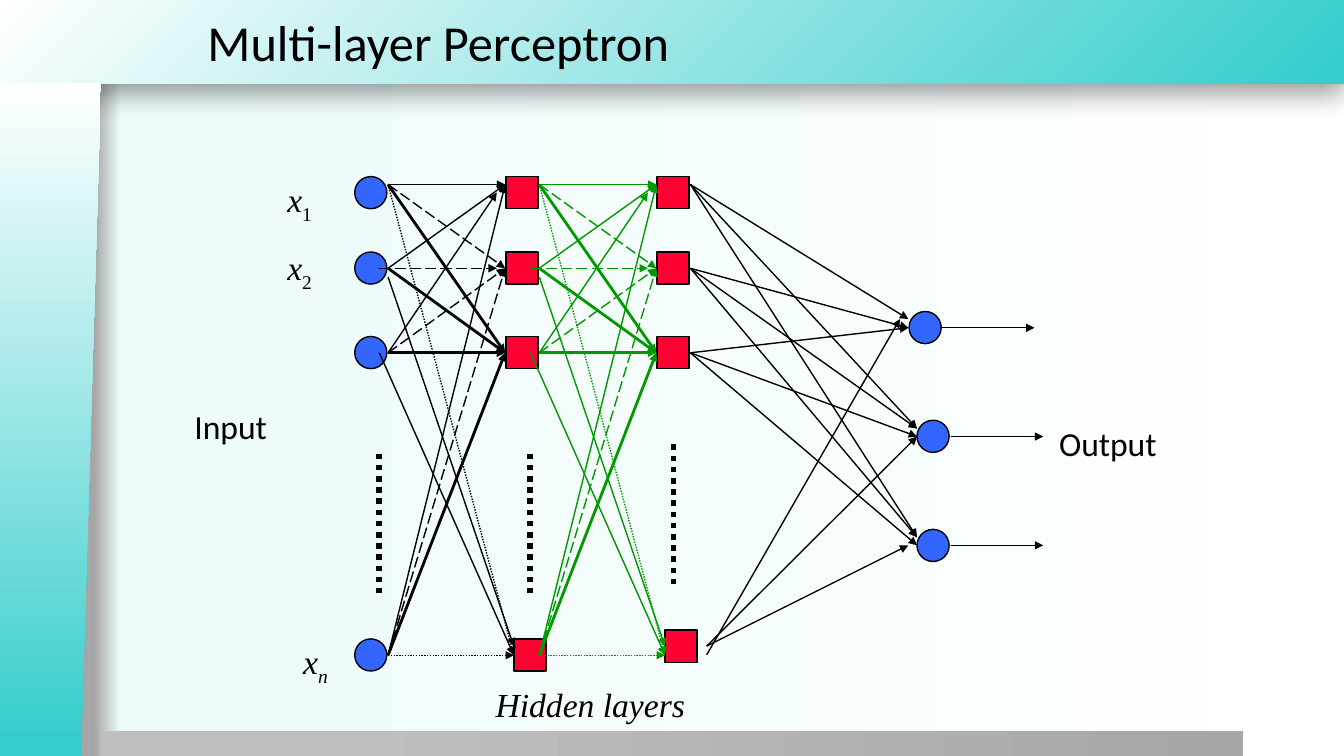
"""Build a slide showing a multi-layer perceptron diagram."""
from lxml import etree
from pptx import Presentation
from pptx.dml.color import RGBColor
from pptx.enum import dml, shapes, text
from pptx.oxml import ns
from pptx.util import Cm, Pt

BLACK = RGBColor(0x00, 0x00, 0x00)
WHITE = RGBColor(0xFF, 0xFF, 0xFF)
TEAL = RGBColor(0x34, 0xCC, 0xCC)
MINT = RGBColor(0xED, 0xFB, 0xFB)
GREY = RGBColor(0xA6, 0xA6, 0xA6)
LIGHT_GREY = RGBColor(0xBF, 0xBF, 0xBF)
MID_GREY = RGBColor(0xA7, 0xA7, 0xA7)
BLUE = RGBColor(0x33, 0x66, 0xFF)
RED = RGBColor(0xFF, 0x00, 0x33)
GREEN = RGBColor(0x00, 0x99, 0x00)

SERIF, SANS = "Times New Roman", "Calibri"
OVAL, BOX = shapes.MSO_SHAPE.OVAL, shapes.MSO_SHAPE.RECTANGLE
DOTS, DASHES = dml.MSO_LINE.ROUND_DOT, dml.MSO_LINE.LONG_DASH
NODE = 0.81
LAYER_GAP = 3.81
ROWS = (4.65, 6.76, 8.89, 16.51)

INPUTS = [(8.94, y) for y in (4.45, 6.35, 8.48, 16.1)]
HIDDEN = [(x, y) for x in (12.75, 16.56) for y in (4.45, 6.35, 8.48)]
LAST_HIDDEN = [(12.95, 16.1), (16.76, 15.88)]
OUTPUTS = [(22.91, 7.85), (23.11, 10.59), (23.11, 13.34)]
OUTPUT_TIPS = [(22.89, 8.26), (23.11, 11), (23.11, 13.74)]
ELLIPSES = [(9.55, 11.43), (13.36, 11.43), (16.97, 11.2)]
HIDDEN_NUDGES = {
    (2, 0): (0, 0, -0.21, 0.2),
    (1, 1): (-0.22, 0, -0.21, 0),
    (1, 3): (0, 0.22, 0, -0.22),
    (2, 3): (-0.22, 0, 0, 0),
}
OUTPUT_NUDGES = {
    (0, 0): (0, 0, 0, -0.22),
    (3, 0): (0, 0.22, -0.21, -0.22),
    (0, 1): (0, 0, 0, -0.2),
    (1, 1): (0, 0, 0, -0.2),
    (0, 2): (0, 0, 0, -0.2),
    (1, 2): (0, 0, 0, -0.2),
    (3, 2): (0, 0, -0.22, 0),
}


def add_child(parent, tag, **attrs):
    """Append a DrawingML element and return it."""
    child = etree.SubElement(parent, ns.qn(tag))
    for name, value in attrs.items():
        child.set(name, str(value))
    return child


def paint_gradient(fill, owner, stops, from_corner=False):
    """Fill with percentage stops, left to right or from the bottom right."""
    fill.gradient()
    fill.gradient_angle = 0
    grad = owner.find(".//" + ns.qn("a:gradFill"))
    stop_list = grad.find(ns.qn("a:gsLst"))
    for old in list(stop_list):
        stop_list.remove(old)
    for percent, color in stops:
        stop = add_child(stop_list, "a:gs", pos=percent * 1000)
        add_child(stop, "a:srgbClr", val=color)
    if from_corner:
        grad.remove(grad.find(ns.qn("a:lin")))
        radial = add_child(grad, "a:path", path="circle")
        add_child(radial, "a:fillToRect", l=100000, t=100000)


def add_panel(slide, kind, left, top, width, height, stops, from_corner=False):
    """Add a borderless gradient panel."""
    sp = slide.shapes.add_shape(kind, Cm(left), Cm(top), Cm(width), Cm(height))
    sp.shadow.inherit = False
    sp.line.fill.background()
    paint_gradient(sp.fill, sp._element.spPr, stops, from_corner)
    return sp


def add_backdrop(slide):
    """Add the background, header, footer and side panel."""
    paint_gradient(slide.background.fill, slide._element,
                   [(7, GREY), (9, MINT), (100, WHITE)])
    teal_fade = [(0, TEAL), (100, WHITE)]
    header = add_panel(slide, BOX, -0.02, 0, 33.88, 2.11, teal_fade, True)
    effects = header._element.spPr.find(ns.qn("a:effectLst"))
    shadow = add_child(effects, "a:outerShdw", blurRad=Pt(20), dist=Pt(6),
                       dir=5400000, algn="t", rotWithShape=0)
    add_child(add_child(shadow, "a:srgbClr", val=BLACK), "a:alpha", val=40000)
    add_panel(slide, BOX, 2.54, 18.42, 28.78, 0.66,
              [(20, LIGHT_GREY), (100, MID_GREY)])
    side = add_panel(slide, shapes.MSO_SHAPE.FLOWCHART_MANUAL_INPUT,
                     -7.21, 9.32, 16.97, 2.54, [(1, TEAL), (100, WHITE)])
    side.rotation = 270
    side._element.spPr.xfrm.set("flipV", "1")


def add_nodes(slide, kind, color, places):
    """Add one network node at each place."""
    for left, top in places:
        sp = slide.shapes.add_shape(kind, Cm(left), Cm(top), Cm(NODE), Cm(NODE))
        sp.shadow.inherit = False
        sp.fill.solid()
        sp.fill.fore_color.rgb = color
        sp.line.color.rgb = BLACK
        sp.line.width = Pt(1)


def add_line(slide, x1, y1, x2, y2, color=BLACK, width=1, dash=None, arrow=True):
    """Add a straight line, with an arrowhead unless told otherwise."""
    line = slide.shapes.add_connector(shapes.MSO_CONNECTOR.STRAIGHT,
                                      Cm(x1), Cm(y1), Cm(x2), Cm(y2))
    line.line.color.rgb = color
    line.line.width = Pt(width)
    if dash:
        line.line.dash_style = dash
    if arrow:
        add_child(line.line._get_or_add_ln(), "a:tailEnd", type="triangle")
    add_child(line._element.spPr, "a:effectLst")


def hidden_style(source, target):
    """Return line width and dash for a link into a hidden layer."""
    if target == 3:
        return 1, DOTS if source in (0, 3) else None
    return ((1, None), (1, DASHES), (2, None))[target]


def plain_style(source, target):
    """Return line width and dash for a link into the output layer."""
    return 1, None


def link_layers(slide, starts, ends, nudges, style, color):
    """Link every start to every end."""
    for j, end in enumerate(ends):
        for i, start in enumerate(starts):
            shift = nudges.get((i, j), (0, 0, 0, 0))
            points = [a + b for a, b in zip(start + end, shift)]
            add_line(slide, *points, color, *style(i, j))


def add_label(slide, left, top, width, height, words, font=SANS, size=24,
              italic=False, sub=None):
    """Add a one-line label with an optional subscript."""
    sp = slide.shapes.add_textbox(Cm(left), Cm(top), Cm(width), Cm(height))
    tf = sp.text_frame
    tf.word_wrap = False
    p = tf.paragraphs[0]
    p.text = words
    if sub:
        r = p.add_run()
        r.text = sub
    for r in p.runs:
        r.font.name = font
        r.font.size = Pt(size)
        r.font.italic = italic
        r.font.color.rgb = BLACK
    if sub:
        r.font.italic = sub.isalpha()
        r.font._element.set("baseline", "-25000")
    return tf


def main():
    """Build and save the slide."""
    prs = Presentation()
    prs.slide_width, prs.slide_height = Cm(33.87), Cm(19.05)
    slide = prs.slides.add_slide(prs.slide_layouts[6])
    add_backdrop(slide)
    add_nodes(slide, OVAL, BLUE, INPUTS + OUTPUTS)
    add_nodes(slide, BOX, RED, HIDDEN + LAST_HIDDEN)

    for layer, color in enumerate((BLACK, GREEN)):
        shift = layer * LAYER_GAP
        starts = [(9.78 + shift, y) for y in ROWS]
        ends = [(x + shift, y) for x, y in zip((12.73, 12.73, 12.73, 12.95), ROWS)]
        link_layers(slide, starts, ends, HIDDEN_NUDGES, hidden_style, color)
    starts = [(17.4, y) for y in ROWS[:3]] + [(17.81, 16.28)]
    link_layers(slide, starts, OUTPUT_TIPS, OUTPUT_NUDGES, plain_style, BLACK)
    for x, y in OUTPUT_TIPS:
        add_line(slide, x + 0.85, y, x + 3.18, y)
    for x, y in ELLIPSES:
        add_line(slide, x, y, x, y + 3.58, width=4, dash=DOTS, arrow=False)

    for left, top, sub in ((6.99, 4.39, "1"), (6.99, 6.1, "2"), (7.39, 16.03, "n")):
        add_label(slide, left, top, 1.17, 1.27, "x", SERIF, italic=True, sub=sub)
    add_label(slide, 4.65, 10.11, 2.36, 1.27, "Input")
    add_label(slide, 26.44, 10.54, 3, 1.27, "Output")
    add_label(slide, 12.24, 17.12, 5.54, 1.27, "Hidden layers", SERIF, italic=True)
    title = add_label(slide, 4.98, 0, 28.9, 2.11, "Multi-layer Perceptron", size=36)
    title.word_wrap = True
    title.vertical_anchor = text.MSO_ANCHOR.MIDDLE
    prs.save("out.pptx")


if __name__ == "__main__":
    main()
